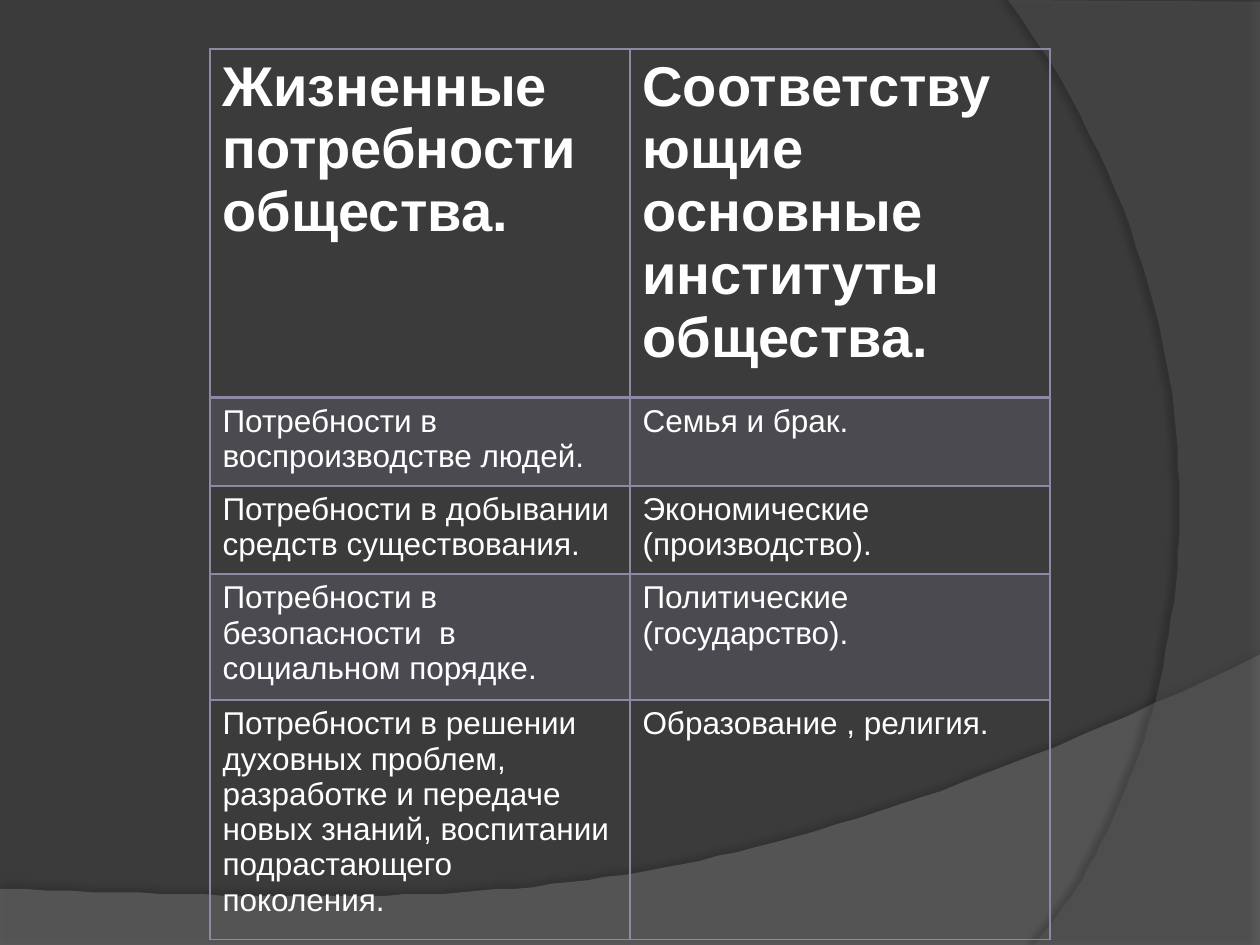
from dataclasses import dataclass

from lxml import etree
from pptx import Presentation, util as u
from pptx.dml import color as c
from pptx.oxml import ns


@dataclass(frozen=True)
class Theme:
    font: str = "Arial"
    back: str = "3B3B3B"
    wave: str = "7F7F7F"
    arc: str = "5E5E5E"
    accent: str = "8D89A4"
    text: str = "FFFFFF"
    shadow: str = "000000"
    head_size: int = 32
    body_size: int = 18


def sub(parent, tag, **attrs):
    return etree.SubElement(parent, ns.qn(tag), {k: str(v) for k, v in attrs.items()})


def curve(p0, p1, p2, p3, steps=60):
    """Points along a cubic curve, after its start."""
    for i in range(1, steps + 1):
        t = i / steps
        weights = ((1 - t) ** 3, 3 * t * (1 - t) ** 2, 3 * t * t * (1 - t), t ** 3)
        yield tuple(sum(w * p[k] for w, p in zip(weights, (p0, p1, p2, p3))) for k in (0, 1))


class Deck:
    def __init__(self, theme, width, height):
        self.theme = theme
        self.prs = Presentation()
        self.prs.slide_width, self.prs.slide_height = u.Pt(width), u.Pt(height)
        self.s = None

    def slide(self):
        self.s = self.prs.slides.add_slide(self.prs.slide_layouts[6])
        self.paint(self.s.background.fill, self.theme.back)

    def paint(self, fill, rgb, alpha=100):
        fill.solid()
        fill.fore_color.rgb = c.RGBColor.from_string(rgb)
        if alpha < 100:
            # The colour element of the fill carries its transparency
            clr = fill._xPr.find(ns.qn("a:solidFill"))[0]
            sub(clr, "a:alpha", val=alpha * 1000)

    def outline(self, points, rgb, alpha, shadow):
        """Translucent closed outline; shadow is (alpha, blur, distance, angle)."""
        fb = self.s.shapes.build_freeform(*points[0], scale=u.Pt(1))
        fb.add_line_segments(points[1:], close=True)
        sp = fb.convert_to_shape()
        self.paint(sp.fill, rgb, alpha)
        sp.line.fill.background()
        sp.shadow.inherit = False
        opacity, blur, dist, angle = shadow
        effects = sp._element.spPr.find(ns.qn("a:effectLst"))
        sh = sub(effects, "a:outerShdw", blurRad=u.Pt(blur), dist=u.Pt(dist),
                 dir=angle * 60000, algn="ctr", rotWithShape=0)
        clr = sub(sh, "a:srgbClr", val=self.theme.shadow)
        sub(clr, "a:alpha", val=opacity * 1000)

    def borders(self, cell, **widths):
        tcPr = cell._tc.get_or_add_tcPr()
        for i, side in enumerate("LRTB"):
            ln = sub(tcPr, f"a:ln{side}", w=u.Pt(widths.get(side, 1)))
            sub(sub(ln, "a:solidFill"), "a:srgbClr", val=self.theme.accent)
            tcPr.insert(i, ln)

    def cell_text(self, cell, words, size, bold):
        r = cell.text_frame.paragraphs[0].add_run()
        r.text = words
        r.font.name, r.font.size, r.font.bold = self.theme.font, u.Pt(size), bold
        r.font.color.rgb = c.RGBColor.from_string(self.theme.text)

    def table(self, left, top, col_width, heights, rows):
        th, cols = self.theme, len(rows[0])
        tbl = self.s.shapes.add_table(len(rows), cols, u.Pt(left), u.Pt(top),
                                      u.Pt(col_width * cols), u.Pt(sum(heights))).table
        tbl.horz_banding = False
        for col in tbl.columns:
            col.width = u.Pt(col_width)
        for i, (height, row) in enumerate(zip(heights, rows)):
            tbl.rows[i].height = u.Pt(height)
            head = i == 0
            for j, words in enumerate(row):
                cell = tbl.cell(i, j)
                # Every other body row is tinted
                if i % 2:
                    self.paint(cell.fill, th.accent, 20)
                else:
                    cell.fill.background()
                # The rule below the heading is heavier
                self.borders(cell, T=2 if i == 1 else 1, B=2 if head else 1)
                self.cell_text(cell, words, th.head_size if head else th.body_size, head)


ROWS = [
    ("Жизненные потребности общества.", "Соответствующие основные институты общества."),
    ("Потребности в воспроизводстве людей.", "Семья и брак."),
    ("Потребности в добывании средств существования.", "Экономические (производство)."),
    ("Потребности в безопасности  в социальном порядке.", "Политические (государство)."),
    ("Потребности в решении духовных проблем, разработке и передаче новых знаний, "
     "воспитании подрастающего поколения.", "Образование , религия."),
]


def main():
    th = Theme()
    deck = Deck(th, 720, 540)
    deck.slide()

    # Background wave along the bottom
    wave_start = (720, 374.4)
    wave = [(0, 507.6), (0, 540.7), (720, 540.7), wave_start,
            *curve(wave_start, (402.5, 524.9), (281.5, 517.7), (0, 507.6))]
    deck.outline(wave, th.wave, 45, (35, 4, 3.5, 270))

    # Background arc on the right
    arc_start = (591, 540)
    arc = [(720, 1.4), (720, 540), arc_start,
           *curve(arc_start, (673.2, 445.7), (733, 216), (576, 0))]
    deck.outline(arc, th.arc, 40, (45, 4, 4, 180))

    # Needs of society and the institutions that meet them
    deck.table(120, 28, 240, (199.2, 50.4, 50.4, 72, 136.8), ROWS)

    deck.prs.save("out.pptx")


if __name__ == "__main__":
    main()
